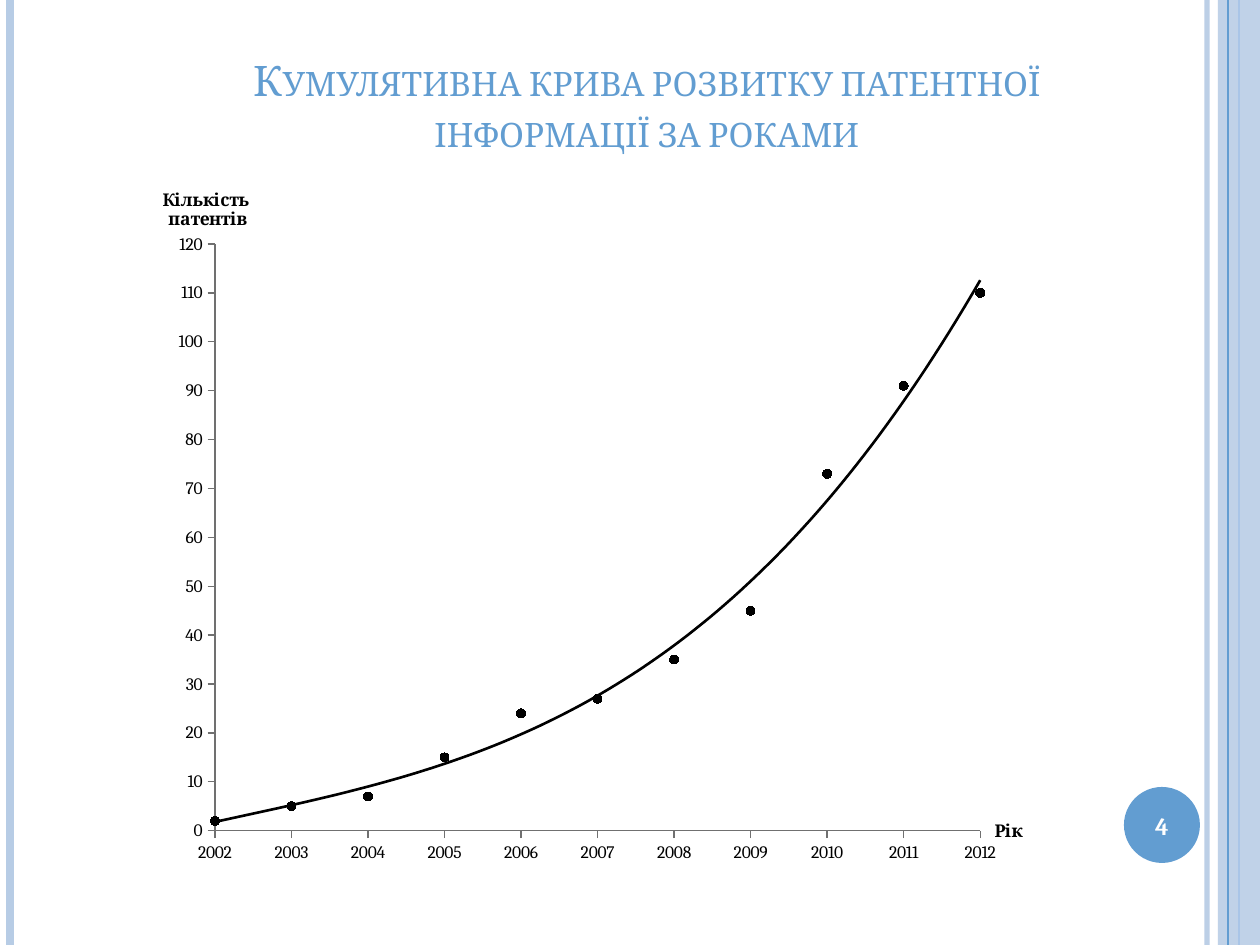
from lxml.etree import SubElement
from pptx import Presentation
from pptx.chart.data import XyChartData
from pptx.dml.color import RGBColor
from pptx.enum.chart import XL_CHART_TYPE, XL_MARKER_STYLE, XL_TICK_MARK
from pptx.enum.shapes import MSO_CONNECTOR, MSO_SHAPE
from pptx.enum.text import MSO_ANCHOR, PP_ALIGN
from pptx.oxml import parse_xml
from pptx.oxml.ns import nsdecls, qn
from pptx.util import Pt

PX = 914400 // 126
FACE = "Cambria"
PALE, BLUE, BLACK, WHITE, GRAY = "B7CCE5", "629DD1", "000000", "FFFFFF", "707070"
TITLE = "Кумулятивна крива розвитку патентної інформації за роками"
START = 2002
COUNTS = [2, 5, 7, 15, 24, 27, 35, 45, 73, 91, 110]
BAND = (1218, 0, 42, 945)
BACK = [(1207, PALE, 3, 93), (10, PALE, 4.5, 100)]
FRONT = [(1239, "A9C5E7", 1.5, 100), (1228, BLUE, 0.75, 100)]
CHART = (144, 178, 921, 769)
PLOT = dict(x=0.077, y=0.086, w=0.831, h=0.763)
AXES = [
    ("Рік", START, START + len(COUNTS) - 1, 1, dict(x=0.92, y=0.83)),
    ("Кількість\n патентів", 0, 120, 10, dict(x=0.016, y=0.008)),
]


def emu(*nums):
    return [n * PX for n in nums]


def paint(fill, tone, alpha=100):
    fill.solid()
    fill.fore_color.rgb = RGBColor.from_string(tone)
    if alpha < 100:
        node = fill._xPr.find(qn("a:solidFill"))[0]
        SubElement(node, qn("a:alpha"), val=str(alpha * 1000))


def rule(slide, x, tone, width, alpha):
    line = slide.shapes.add_connector(MSO_CONNECTOR.STRAIGHT, *emu(x, 0, x, 945))
    line.line.width = Pt(width)
    paint(line.line.fill, tone, alpha)
    SubElement(line._element.spPr, qn("a:effectLst"))


def solid(slide, kind, box, tone, alpha=100):
    shape = slide.shapes.add_shape(kind, *emu(*box))
    shape.shadow.inherit = False
    shape.line.fill.background()
    paint(shape.fill, tone, alpha)


def style(font, size, tone, bold=False):
    font.name, font.size, font.bold = FACE, Pt(size), bold
    paint(font.fill, tone)


def label(slide, box, text, size, tone, anchor, bold=False):
    frame = slide.shapes.add_textbox(*emu(*box)).text_frame
    frame.word_wrap = True
    frame.vertical_anchor = anchor
    para = frame.paragraphs[0]
    para.text = text
    para.alignment = PP_ALIGN.CENTER
    style(para.font, size, tone, bold)
    return para


def layout(spots, inner=False):
    tags = '<c:layoutTarget val="inner"/>' if inner else ""
    tags += "".join(f'<c:{k}Mode val="edge"/>' for k in "xy")
    tags += "".join(f'<c:{k} val="{v}"/>' for k, v in spots.items())
    return parse_xml(f'<c:layout {nsdecls("c")}><c:manualLayout>{tags}</c:manualLayout></c:layout>')


def place(parent, node, before):
    for old in parent.findall(qn("c:layout")):
        parent.remove(old)
    parent.find(qn(before)).addprevious(node)


def setup(axis, text, low, high, step, spot):
    axis.minimum_scale, axis.maximum_scale, axis.major_unit = low, high, step
    axis.has_major_gridlines = False
    axis.major_tick_mark = XL_TICK_MARK.OUTSIDE
    axis.minor_tick_mark = XL_TICK_MARK.NONE
    axis.tick_labels.number_format = "General"
    axis.tick_labels.number_format_is_linked = False
    axis.format.line.width = Pt(0.75)
    paint(axis.format.line.fill, GRAY)
    title = axis.axis_title
    frame = title.text_frame
    frame.text = text
    for para in frame.paragraphs:
        style(para.font, 10, BLACK, True)
    body = frame._txBody.find(qn("a:bodyPr"))
    body.set("rot", "0")
    body.set("vert", "horz")
    place(title._element, layout(spot), "c:overlay")


def graph(slide):
    data = XyChartData()
    row = data.add_series("Series 1")
    for year, count in enumerate(COUNTS, START):
        row.add_data_point(year, count)
    chart = slide.shapes.add_chart(XL_CHART_TYPE.XY_SCATTER, *emu(*CHART), data).chart
    chart.has_legend = chart.has_title = False
    style(chart.font, 10, BLACK)
    for axis, spec in zip((chart.category_axis, chart.value_axis), AXES):
        setup(axis, *spec)
    plot = chart.plots[0]
    plot.vary_by_categories = False
    place(chart._chartSpace.chart.plotArea, layout(PLOT, True), "c:scatterChart")
    series = plot.series[0]
    series.format.line.fill.background()
    mark = series.marker
    mark.style, mark.size = XL_MARKER_STYLE.CIRCLE, 5
    paint(mark.format.fill, BLACK)
    paint(mark.format.line.fill, BLACK)
    trend = parse_xml(
        f'<c:trendline {nsdecls("c", "a")}><c:spPr><a:ln w="19050"><a:solidFill>'
        f'<a:srgbClr val="{BLACK}"/></a:solidFill></a:ln></c:spPr>'
        '<c:trendlineType val="poly"/><c:order val="3"/>'
        '<c:dispRSqr val="0"/><c:dispEq val="0"/></c:trendline>')
    series._element.find(qn("c:xVal")).addprevious(trend)


def main():
    deck = Presentation()
    deck.slide_width, deck.slide_height = emu(1260, 945)
    slide = deck.slides.add_slide(deck.slide_layouts[6])
    for item in BACK:
        rule(slide, *item)
    solid(slide, MSO_SHAPE.RECTANGLE, BAND, PALE, 87)
    for item in FRONT:
        rule(slide, *item)
    solid(slide, MSO_SHAPE.OVAL, (1124, 787, 76, 76), BLUE)
    head = label(slide, (223, 86, 848, 76), TITLE, 24, BLUE, MSO_ANCHOR.BOTTOM)
    head.runs[0]._r.get_or_add_rPr().set("cap", "small")
    graph(slide)
    label(slide, (1120, 790, 84, 72), "4", 14, WHITE, MSO_ANCHOR.MIDDLE, True)
    deck.save("out.pptx")


if __name__ == "__main__":
    main()
